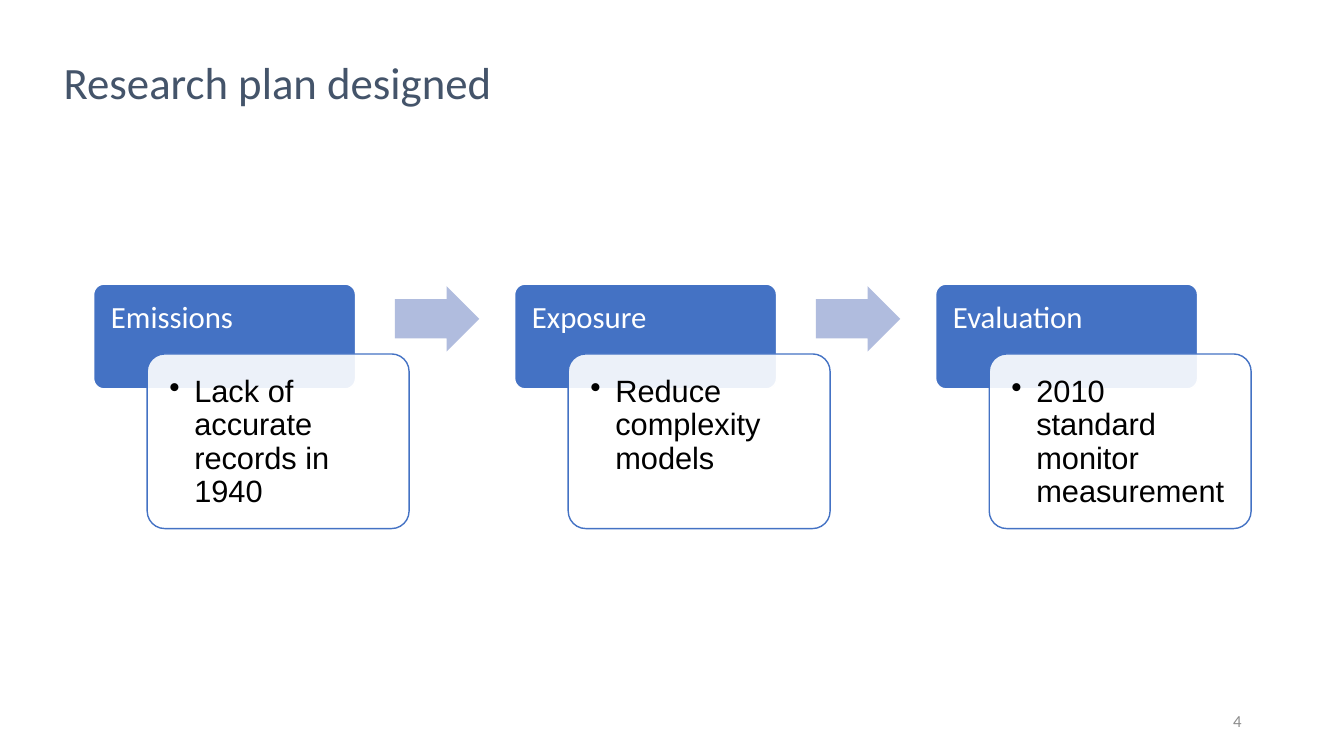
from lxml import etree
from pptx import Presentation
from pptx.dml.color import RGBColor
from pptx.enum import shapes, text
from pptx.oxml import ns
from pptx.util import Cm, Pt

# Content
TITLE = "Research plan designed"
NUMBER = "4"
STEPS = [
    ("Emissions", "Lack of accurate records in 1940"),
    ("Exposure", "Reduce complexity models"),
    ("Evaluation", "2010 standard monitor measurement"),
]

# Colours
BLUE = RGBColor(0x44, 0x72, 0xC4)
PALE = RGBColor(0xB0, 0xBC, 0xDE)
SLATE = RGBColor(0x44, 0x54, 0x6A)
GREY = RGBColor(0x8C, 0x8C, 0x8C)
WHITE = RGBColor(255, 255, 255)
BLACK = RGBColor(0, 0, 0)

# Layout in centimetres
LEFT, TOP, PITCH = 2.36, 7.16, 10.61
HEAD_W, HEAD_H = 6.6, 2.64
CARD_DX, CARD_DY, CARD_H = 1.35, 1.76, 4.4
ARROW_DX, ARROW_DY, ARROW_W, ARROW_H = 7.59, 0.05, 2.13, 1.65


def style(frame, words, font, size, color, align=text.PP_ALIGN.LEFT):
    frame.word_wrap = True
    frame.text = words
    par = frame.paragraphs[0]
    par.alignment = align
    run = par.runs[0].font
    run.name, run.size, run.color.rgb = font, Pt(size), color
    return par


def inset(frame, side, base):
    frame.margin_left = frame.margin_top = frame.margin_right = Cm(side)
    frame.margin_bottom = Cm(base)
    frame.vertical_anchor = text.MSO_ANCHOR.TOP


def block(kind, x, y, w, h, fill, line=None):
    shape = slide.shapes.add_shape(kind, Cm(x), Cm(y), Cm(w), Cm(h))
    shape.shadow.inherit = False
    shape.fill.solid()
    shape.fill.fore_color.rgb = fill
    if line is None:
        shape.line.fill.background()
    else:
        shape.line.color.rgb = line
        shape.line.width = Pt(1)
    return shape


def rounded(x, y, h, fill, line):
    shape = block(shapes.MSO_SHAPE.ROUNDED_RECTANGLE, x, y, HEAD_W, h, fill, line)
    shape.adjustments[0] = 0.1
    return shape


def bullet(par):
    props = par._p.get_or_add_pPr()
    props.set("marL", str(Cm(0.63)))
    props.set("indent", str(-Cm(0.63)))
    mark = etree.SubElement(props, ns.qn("a:buChar"))
    mark.set("char", "•")


deck = Presentation()
deck.slide_width, deck.slide_height = Cm(33.87), Cm(19.05)
slide = deck.slides.add_slide(deck.slide_layouts[5])

# Title
title = slide.shapes.title
title.left, title.top = Cm(1.35), Cm(1.4)
title.width, title.height = Cm(31.2), Cm(3.68)
title.text_frame.vertical_anchor = text.MSO_ANCHOR.TOP
style(title.text_frame, TITLE, "Calibri", 32, SLATE).line_spacing = 0.9

# Steps: header, card, arrow to the next step
for i, (name, note) in enumerate(STEPS):
    x = LEFT + i * PITCH
    head = rounded(x, TOP, HEAD_H, BLUE, WHITE)
    inset(head.text_frame, 0.36, 1.04)
    style(head.text_frame, name, "Calibri", 22, WHITE).line_spacing = 0.9

    card = rounded(x + CARD_DX, TOP + CARD_DY, CARD_H, WHITE, BLUE)
    tint = card.fill._xPr.find(".//" + ns.qn("a:srgbClr"))
    etree.SubElement(tint, ns.qn("a:alpha")).set("val", "90000")
    inset(card.text_frame, 0.43, 0.43)
    par = style(card.text_frame, note, "Arial", 22, BLACK)
    par.line_spacing = 0.9
    bullet(par)

    if i < len(STEPS) - 1:
        arrow = block(shapes.MSO_SHAPE.RIGHT_ARROW, x + ARROW_DX,
                      TOP + ARROW_DY, ARROW_W, ARROW_H, PALE)
        arrow.adjustments[0] = 0.6
        arrow.adjustments[1] = 0.5

# Slide number
page = slide.shapes.add_textbox(Cm(23.92), Cm(17.66), Cm(7.62), Cm(1.01))
page.text_frame.vertical_anchor = text.MSO_ANCHOR.MIDDLE
style(page.text_frame, NUMBER, "Calibri", 12, GREY, text.PP_ALIGN.RIGHT)

deck.save("out.pptx")
